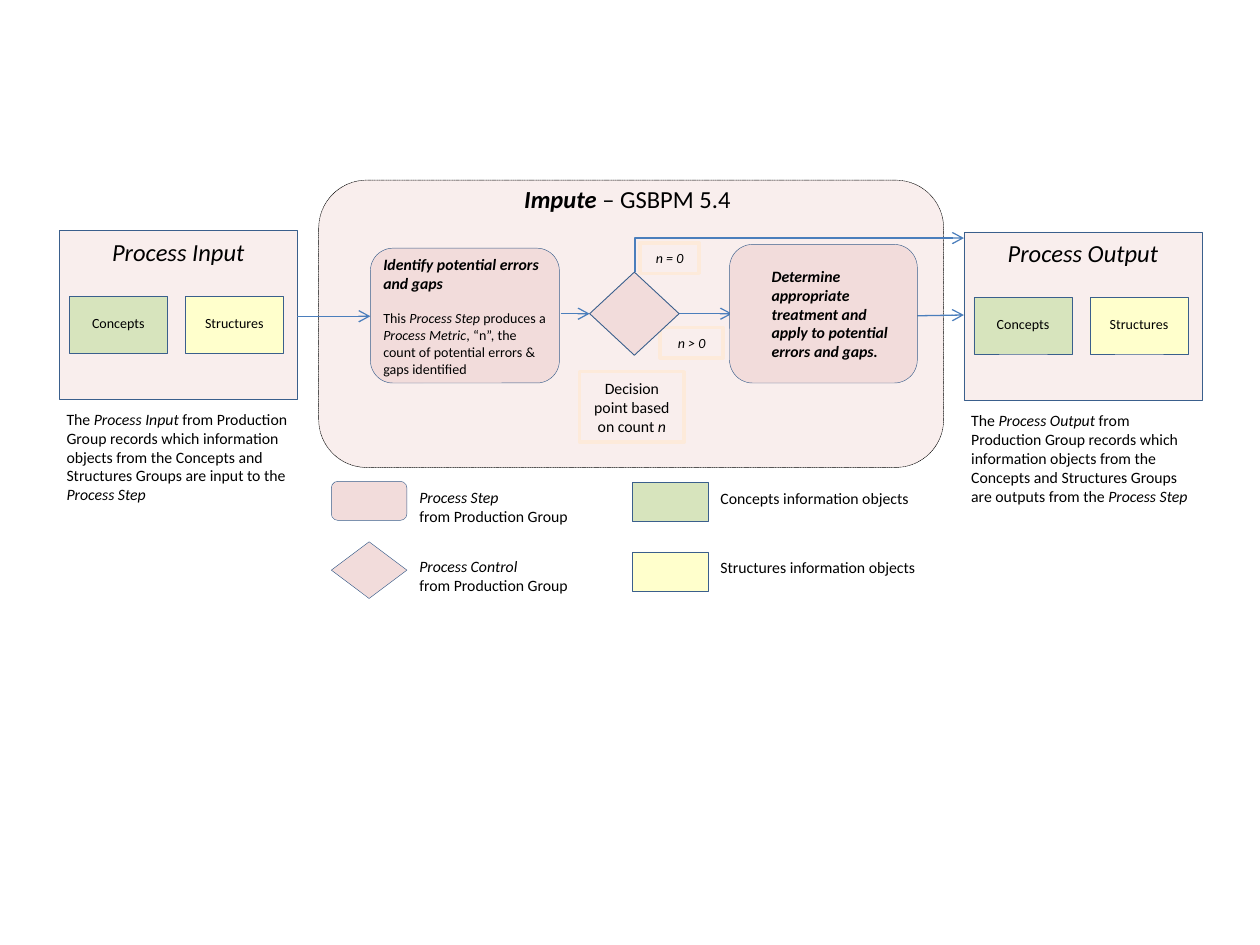
import pptx
import pptx.dml.color
import pptx.enum.dml
import pptx.enum.shapes
import pptx.enum.text
import pptx.oxml.ns
import pptx.util
from pptx.util import Inches

RGBColor = pptx.dml.color.RGBColor
SHAPE = pptx.enum.shapes.MSO_SHAPE
CONNECTOR = pptx.enum.shapes.MSO_CONNECTOR
ANCHOR = pptx.enum.text.MSO_ANCHOR
ALIGN = pptx.enum.text.PP_ALIGN

BLACK = RGBColor(0x00, 0x00, 0x00)
PANEL = RGBColor(0xF9, 0xEE, 0xED)
STEP = RGBColor(0xF2, 0xDC, 0xDB)
CONCEPTS = RGBColor(0xD7, 0xE4, 0xBD)
STRUCTURES = RGBColor(0xFF, 0xFF, 0xCC)
OUTLINE = RGBColor(0x3A, 0x5F, 0x8C)
NOTE_LINE = RGBColor(0xFD, 0xEA, 0xDA)
ARROW = RGBColor(0x4B, 0x7E, 0xBC)


def write(tf, lines, size=9, align=ALIGN.LEFT, bold=None):
    """Write lines as paragraphs, with the parts between asterisks in italics."""
    tf.word_wrap = True
    for i, line in enumerate(lines):
        p = tf.paragraphs[0] if i == 0 else tf.add_paragraph()
        p.alignment = align
        p.font.name = "Calibri"
        p.font.size = pptx.util.Pt(size)
        p.font.color.rgb = BLACK
        p.font.bold = bold
        for j, part in enumerate(line.split("*")):
            if part:
                r = p.add_run()
                r.text = part
                r.font.italic = j % 2 == 1


def add_text(s, x, y, w, h, lines):
    """Add a left-aligned text box."""
    sp = s.shapes.add_textbox(Inches(x), Inches(y), Inches(w), Inches(h))
    write(sp.text_frame, lines)


def add_box(s, kind, x, y, w, h, fill, line=OUTLINE, width=0.25):
    """Add a filled, outlined shape without shadow."""
    sp = s.shapes.add_shape(kind, Inches(x), Inches(y), Inches(w), Inches(h))
    sp.shadow.inherit = False
    sp.fill.solid()
    sp.fill.fore_color.rgb = fill
    sp.line.color.rgb = line
    sp.line.width = pptx.util.Pt(width)
    return sp


def add_arrow(s, x1, y1, x2, y2, kind=CONNECTOR.STRAIGHT):
    """Add a connector with an open arrowhead at its end."""
    c = s.shapes.add_connector(kind, Inches(x1), Inches(y1), Inches(x2), Inches(y2))
    c.line.color.rgb = ARROW
    c.line.width = pptx.util.Pt(0.75)
    ln = c.line._get_or_add_ln()
    ln.append(pptx.oxml.parse_xml(
        f'<a:tailEnd {pptx.oxml.ns.nsdecls("a")} type="arrow"/>'))
    c._element.spPr.append(pptx.oxml.parse_xml(
        f'<a:effectLst {pptx.oxml.ns.nsdecls("a")}/>'))
    return c


def add_corner_arrow(s, x1, y1, x2, y2):
    """Add an arrow that goes up from its start and then right to its end."""
    cx, cy = (x1 + x2) / 2, (y1 + y2) / 2
    half_w, half_h = (y1 - y2) / 2, (x2 - x1) / 2
    c = add_arrow(s, cx + half_w, cy + half_h, cx - half_w, cy - half_h,
                  CONNECTOR.ELBOW)
    c._element.spPr.find(pptx.oxml.ns.qn("a:prstGeom")).set("prst", "bentConnector2")
    c._element.spPr.find(pptx.oxml.ns.qn("a:xfrm")).set("rot", "5400000")


def add_process_box(s, x, y, w, h, name, caption):
    """Draw an input or output box with its two information objects and caption."""
    sp = add_box(s, SHAPE.RECTANGLE, x, y, w, h, PANEL)
    sp.text_frame.vertical_anchor = ANCHOR.TOP
    write(sp.text_frame, [f"*{name}*"], 14, ALIGN.CENTER)
    items = [("Concepts", CONCEPTS), ("Structures", STRUCTURES)]
    for i, (label, fill) in enumerate(items):
        sp = add_box(s, SHAPE.RECTANGLE, x + 0.08 + i * 0.92, y + 0.52, 0.78, 0.45, fill)
        sp.text_frame.margin_bottom = Inches(0.08)
        write(sp.text_frame, [label], 8, ALIGN.CENTER)
    add_text(s, x - 0.04, y + h + 0.03, 1.97, 0.86, [caption])


def add_note(s, x, y, w, h, text, size):
    """Add a small framed note."""
    sp = add_box(s, SHAPE.RECTANGLE, x, y, w, h, PANEL, NOTE_LINE, 2)
    write(sp.text_frame, [text], size, ALIGN.CENTER)


def add_step(s, x, y, w, h, lines, left, right):
    """Add a rounded process step whose first line is bold."""
    sp = add_box(s, SHAPE.ROUNDED_RECTANGLE, x, y, w, h, STEP)
    tf = sp.text_frame
    tf.vertical_anchor = ANCHOR.MIDDLE
    tf.margin_left, tf.margin_right = Inches(left), Inches(right)
    tf.margin_top = tf.margin_bottom = 0
    write(tf, lines)
    tf.paragraphs[0].font.bold = True
    for p in tf.paragraphs[1:]:
        p.font.size = pptx.util.Pt(8)
        p.space_before = pptx.util.Pt(10)


def add_panel(s, x, y, w, h):
    """Draw the panel of the sub-process with its heading."""
    sp = add_box(s, SHAPE.ROUNDED_RECTANGLE, x, y, w, h, PANEL, BLACK)
    sp.line.dash_style = pptx.enum.dml.MSO_LINE.SQUARE_DOT
    title = s.shapes.title
    title.left, title.top = Inches(x - 0.03), Inches(y - 0.02)
    title.width, title.height = Inches(w), Inches(0.34)
    title.text_frame.vertical_anchor = ANCHOR.TOP
    write(title.text_frame, ["*Impute* – GSBPM 5.4"], 14, ALIGN.CENTER)
    title.text_frame.paragraphs[0].runs[0].font.bold = True
    s.shapes._spTree.append(title._element)


def add_flow(s, x, y):
    """Draw the steps, the decision and its notes inside the panel."""
    mid = y + 1.06
    add_arrow(s, x + 1.92, mid, x + 2.15, mid)
    add_arrow(s, x + 2.86, mid, x + 3.28, mid)
    add_corner_arrow(s, x + 2.51, y + 0.73, x + 5.12, y + 0.46)
    add_step(s, x + 0.41, y + 0.54, 1.5, 1.07, [
        "*Identify potential errors and gaps*",
        "This *Process Step* produces a *Process Metric*, “n”, "
        "the count of potential errors & gaps identified"], 0.05, 0.05)
    add_step(s, x + 3.26, y + 0.51, 1.49, 1.1, [
        "*Determine appropriate treatment and apply to potential errors and gaps.*"],
        0.28, 0.13)
    add_note(s, x + 2.07, y + 1.52, 0.83, 0.56, "Decision point based on count *n*", 9)
    add_note(s, x + 2.71, y + 1.17, 0.5, 0.24, "*n > 0*", 8)
    add_note(s, x + 2.55, y + 0.5, 0.47, 0.24, "*n = 0*", 8)
    add_box(s, SHAPE.DIAMOND, x + 2.15, y + 0.73, 0.71, 0.66, STEP, OUTLINE, 0.5)


def add_legend(s, x, y):
    """Draw the key to the shapes and colours."""
    production = "from Production Group"
    entries = [
        (SHAPE.ROUNDED_RECTANGLE, STEP, 0, 0, 0.31, 0, ["*Process Step*", production]),
        (SHAPE.DIAMOND, STEP, 0, 0.48, 0.45, 0.07, ["*Process Control*", production]),
        (SHAPE.RECTANGLE, CONCEPTS, 2.39, 0.01, 0.31, 0, ["Concepts information objects"]),
        (SHAPE.RECTANGLE, STRUCTURES, 2.39, 0.56, 0.31, 0,
         ["Structures information objects"]),
    ]
    for kind, fill, dx, dy, h, drop, lines in entries:
        add_box(s, kind, x + dx, y + dy, 0.6, h, fill)
        add_text(s, x + dx + 0.6, y + dy + drop, 2.1, 0.4, lines)


def build():
    """Build the slide and save it."""
    prs = pptx.Presentation()
    prs.slide_width, prs.slide_height = Inches(10), Inches(7.5)
    s = prs.slides.add_slide(prs.slide_layouts[5])
    add_panel(s, 2.53, 1.43, 4.96, 2.28)
    add_process_box(
        s, 0.47, 1.83, 1.89, 1.34, "Process Input",
        "The *Process Input* from Production Group records which information objects "
        "from the Concepts and Structures Groups are input to the *Process Step*")
    add_process_box(
        s, 7.65, 1.84, 1.89, 1.34, "Process Output",
        "The *Process Output* from Production Group records which information objects "
        "from the Concepts and Structures Groups are outputs from the *Process Step*")
    add_arrow(s, 2.36, 2.51, 2.94, 2.51)
    add_arrow(s, 7.05, 2.51, 7.65, 2.5)
    add_flow(s, 2.53, 1.43)
    add_legend(s, 2.63, 3.82)
    prs.save("out.pptx")


if __name__ == "__main__":
    build()
